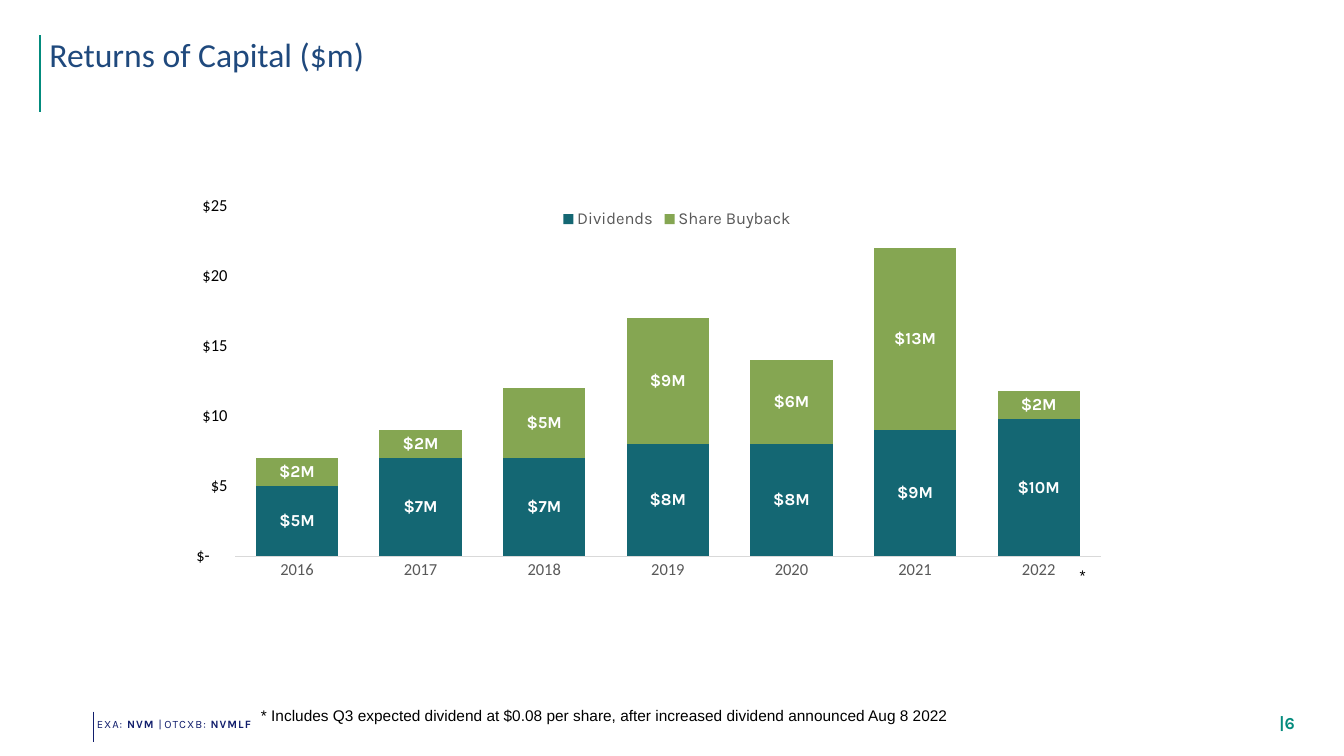
from dataclasses import dataclass

from lxml import etree
from pptx import Presentation
from pptx import util as u
from pptx.chart.data import CategoryChartData
from pptx.dml.color import RGBColor
from pptx.enum import chart as ch, shapes, text
from pptx.oxml import parse_xml
from pptx.oxml.ns import nsdecls, qn


@dataclass(frozen=True)
class Theme:
    teal: str = "038B7D"
    navy: str = "111E6C"
    title: str = "1F497D"
    dividends: str = "146773"
    buyback: str = "85A652"
    grey: str = "595959"
    rule: str = "D9D9D9"
    black: str = "000000"
    white: str = "FFFFFF"
    body_font: str = "Calibri"
    brand_font: str = "Karla"
    note_font: str = "Arial"
    title_size: int = 24
    chart_size: int = 12
    note_size: int = 11
    ticker_size: int = 8


T = Theme()
YEARS = [str(year) for year in range(2016, 2023)]
SERIES = [
    ("Dividends", (5, 7, 7, 8, 8, 9, 9.8), T.dividends),
    ("Share Buyback", (2, 2, 5, 9, 6, 13, 2), T.buyback),
]
DOLLARS = '_("$"* #,##0_);_("$"* \\(#,##0\\);_("$"* "-"??_);_(@_)'
MILLIONS = '"$"0"M"'


def style_font(font, name, size, color, bold=False):
    font.name, font.size, font.bold = name, u.Pt(size), bold
    font.color.rgb = RGBColor.from_string(color)


def place(sp, left, top, width, height):
    sp.left, sp.top = u.Inches(left), u.Inches(top)
    sp.width, sp.height = u.Inches(width), u.Inches(height)


def set_tight_margins(tf):
    tf.margin_left = tf.margin_right = tf.margin_bottom = 0
    tf.margin_top = u.Inches(0.01)
    tf.vertical_anchor = text.MSO_ANCHOR.TOP


def add_title(s, title):
    sp = s.shapes.title
    place(sp, 0.49, 0.33, 12.76, 0.42)
    tf = sp.text_frame
    tf.text = title
    set_tight_margins(tf)
    p = tf.paragraphs[0]
    p.alignment = text.PP_ALIGN.LEFT
    style_font(p.runs[0].font, T.body_font, T.title_size, T.title)


def add_label(s, box, runs, font, size, color, tight=False):
    """Add one line of text; each run is (text, bold, letter spacing in points)."""
    sp = s.shapes.add_textbox(*map(u.Inches, box))
    tf = sp.text_frame
    tf.word_wrap = tight
    if tight:
        set_tight_margins(tf)
    for words, bold, spacing in runs:
        r = tf.paragraphs[0].add_run()
        r.text = words
        style_font(r.font, font, size, color, bold)
        if spacing:
            r.font._element.set("spc", str(round(spacing * 100)))


def add_rule(s, x, top, bottom, color, width):
    line = s.shapes.add_connector(shapes.MSO_CONNECTOR.STRAIGHT, u.Inches(x), u.Inches(top),
                                  u.Inches(x), u.Inches(bottom))
    line.line.color.rgb = RGBColor.from_string(color)
    line.line.width = u.Pt(width)
    etree.SubElement(line._element.spPr, qn("a:effectLst"))


def set_layout(element, before, x, y, w, h, inner=False):
    """Fix a chart part at fractions of the chart area, ahead of the child named by before."""
    for old in element.findall(qn("c:layout")):
        element.remove(old)
    target = '<c:layoutTarget val="inner"/>' if inner else ""
    modes = '<c:xMode val="edge"/><c:yMode val="edge"/>'
    sizes = "".join(f'<c:{k} val="{v}"/>' for k, v in zip("xywh", (x, y, w, h)))
    layout = parse_xml(f'<c:layout {nsdecls("c")}><c:manualLayout>{target}{modes}{sizes}'
                       '</c:manualLayout></c:layout>')
    element.find(qn(before)).addprevious(layout)


def style_axes(chart):
    cat, val = chart.category_axis, chart.value_axis
    for axis, color in ((cat, T.grey), (val, T.black)):
        axis.major_tick_mark = axis.minor_tick_mark = ch.XL_TICK_MARK.NONE
        axis.has_major_gridlines = False
        style_font(axis.tick_labels.font, T.body_font, T.chart_size, color)
    cat.format.line.color.rgb = RGBColor.from_string(T.rule)
    cat.format.line.width = u.Pt(0.75)
    val.format.line.fill.background()
    val.minimum_scale, val.maximum_scale, val.major_unit = 0, 25, 5
    val.tick_labels.number_format = DOLLARS
    val.tick_labels.number_format_is_linked = False


def add_returns_chart(s):
    data = CategoryChartData()
    data.categories = YEARS
    for name, values, _ in SERIES:
        data.add_series(name, values)
    box = map(u.Inches, (1.91, 1.94, 9.28, 4.47))
    chart = s.shapes.add_chart(ch.XL_CHART_TYPE.COLUMN_STACKED, *box, data).chart
    style_font(chart.font, T.body_font, 10, T.black)
    chart.has_title = False
    style_axes(chart)

    plot = chart.plots[0]
    plot.gap_width, plot.overlap, plot.vary_by_categories = 50, 100, False
    for series, (_, _, color) in zip(plot.series, SERIES):
        series.format.fill.solid()
        series.format.fill.fore_color.rgb = RGBColor.from_string(color)
        labels = series.data_labels
        labels.show_value = True
        labels.number_format, labels.number_format_is_linked = MILLIONS, False
        style_font(labels.font, T.brand_font, T.chart_size, T.white, bold=True)

    chart.has_legend = True
    legend = chart.legend
    legend.position = ch.XL_LEGEND_POSITION.BOTTOM
    legend.include_in_layout = False
    style_font(legend.font, T.brand_font, T.chart_size, T.grey)
    set_layout(legend._element, "c:overlay", 0.38, 0.02, 0.26, 0.06)
    plot_area = chart._chartSpace.chart.plotArea
    set_layout(plot_area, "c:barChart", 0.03, 0.02, 0.94, 0.78, inner=True)


def add_footer(s):
    add_label(s, (12.69, 7.06, 0.64, 0.22), [("|6", True, 0)],
              T.brand_font, T.chart_size, T.teal, tight=True)
    add_rule(s, 0.93, 7.06, 7.36, T.navy, 0.5)
    tickers = [("EXA: ", False, 0.7), ("NVM ", True, 0.7), ("| ", False, 0),
               ("OTCXB: ", False, 0.7), ("NVMLF", True, 0.7)]
    add_label(s, (0.96, 7.11, 1.58, 0.16), tickers,
              T.brand_font, T.ticker_size, T.navy, tight=True)


def add_note(s, box, words):
    add_label(s, box, [(words, False, 0)], T.note_font, T.note_size, T.black)


def main():
    prs = Presentation()
    prs.slide_width, prs.slide_height = u.Inches(13.33), u.Inches(7.5)
    s = prs.slides.add_slide(prs.slide_layouts[5])
    add_footer(s)
    add_returns_chart(s)
    add_rule(s, 0.4, 0.35, 1.11, T.teal, 1.5)
    add_title(s, "Returns of Capital ($m)")
    add_note(s, (10.61, 5.57, 0.26, 0.29), "*")
    add_note(s, (2.49, 6.96, 7.06, 0.29),
             "* Includes Q3 expected dividend at $0.08 per share, "
             "after increased dividend announced Aug 8 2022")
    prs.save("out.pptx")


if __name__ == "__main__":
    main()
